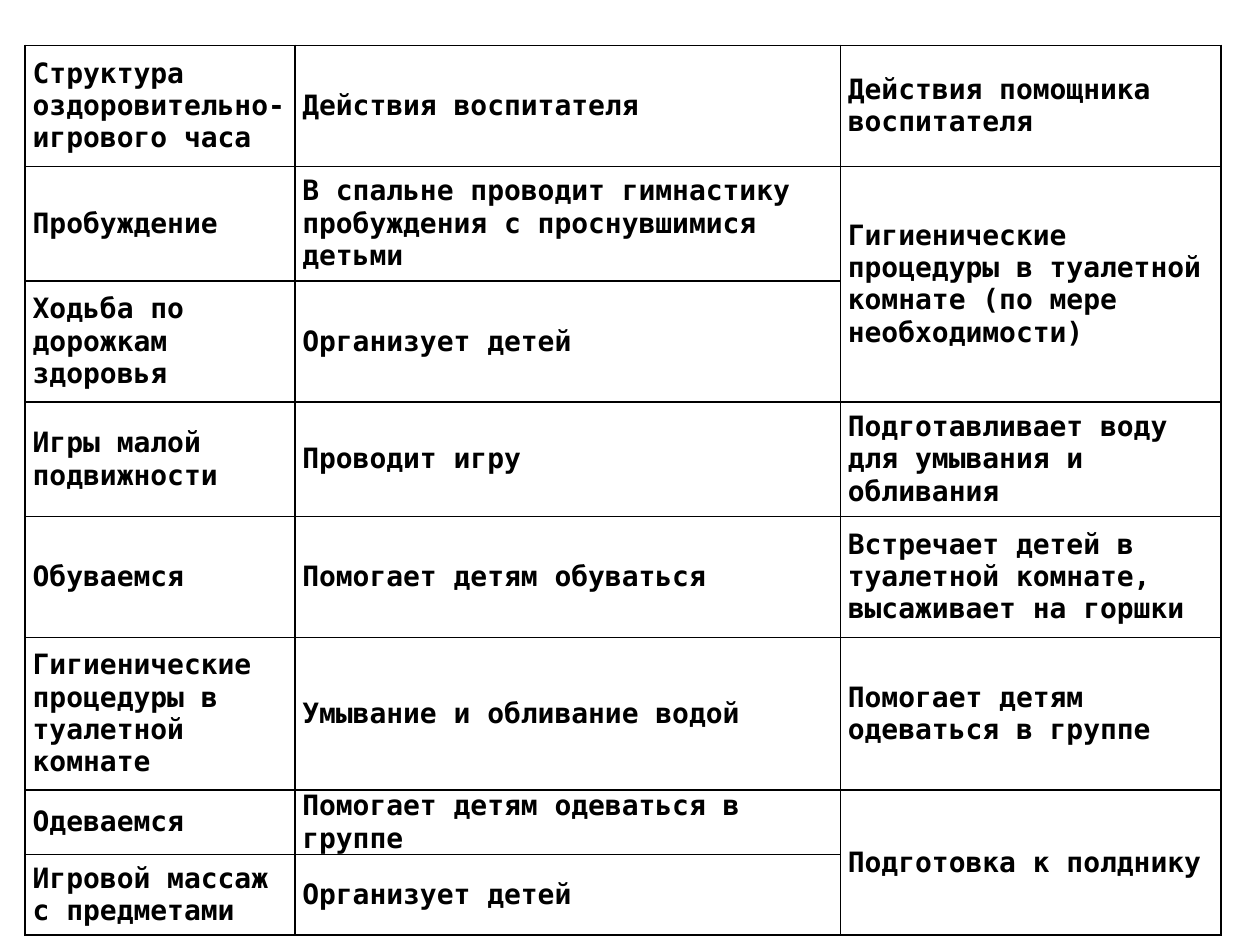
import pptx
import pptx.dml.color
import pptx.enum.text
import pptx.oxml
import pptx.oxml.ns
import pptx.util

THEME = {
    "font": "DejaVu Sans Mono",
    "size": 16,
    "ink": "000000",
    "paper": "FFFFFF",
    "border": 1,
}

presentation = pptx.Presentation()
presentation.slide_width = pptx.util.Inches(10)
presentation.slide_height = pptx.util.Inches(7.5)
slide = presentation.slides.add_slide(presentation.slide_layouts[6])

# The slide is a grid of 1000 by 750 square units.
UNIT = presentation.slide_width // 1000
LEFT, TOP = 20, 36
COLUMN_WIDTHS = [214, 433, 302]
ROW_HEIGHTS = [96, 91, 96, 91, 96, 121, 32, 64]
SIDE_MARGIN = 6

# None continues the cell above.
ROWS = [
    ("Структура оздоровительно-игрового часа", "Действия воспитателя",
     "Действия помощника воспитателя"),
    ("Пробуждение",
     "В спальне проводит гимнастику пробуждения с проснувшимися детьми",
     "Гигиенические процедуры в туалетной комнате (по мере необходимости)"),
    ("Ходьба по дорожкам здоровья", "Организует детей", None),
    ("Игры малой подвижности", "Проводит игру",
     "Подготавливает воду для умывания и обливания"),
    ("Обуваемся", "Помогает детям обуваться",
     "Встречает детей в туалетной комнате, высаживает на горшки"),
    ("Гигиенические процедуры в туалетной комнате",
     "Умывание и обливание водой", "Помогает детям одеваться в группе"),
    ("Одеваемся", "Помогает детям одеваться в группе",
     "Подготовка к полднику"),
    ("Игровой массаж с предметами", "Организует детей", None),
]


def write_text(cell, text, *, size=THEME["size"], color=THEME["ink"], bold=True):
    cell.text = text
    font = cell.text_frame.paragraphs[0].runs[0].font
    font.name = THEME["font"]
    font.size = pptx.util.Pt(size)
    font.bold = bold
    font.color.rgb = pptx.dml.color.RGBColor.from_string(color)


def draw_borders(cell):
    properties = cell._tc.get_or_add_tcPr()
    width = pptx.util.Pt(THEME["border"])
    for side in ("lnL", "lnR", "lnT", "lnB"):
        properties.append(pptx.oxml.parse_xml(
            f'<a:{side} {pptx.oxml.ns.nsdecls("a")} w="{width}"><a:solidFill>'
            f'<a:srgbClr val="{THEME["ink"]}"/></a:solidFill></a:{side}>'))


table = slide.shapes.add_table(
    len(ROWS), len(COLUMN_WIDTHS), LEFT * UNIT, TOP * UNIT,
    sum(COLUMN_WIDTHS) * UNIT, sum(ROW_HEIGHTS) * UNIT).table
table.first_row = False
table.horz_banding = False

for column, width in zip(table.columns, COLUMN_WIDTHS):
    column.width = width * UNIT
for row, height in zip(table.rows, ROW_HEIGHTS):
    row.height = height * UNIT

for row_index, texts in enumerate(ROWS):
    for column_index, text in enumerate(texts):
        cell = table.cell(row_index, column_index)
        cell.margin_left = cell.margin_right = SIDE_MARGIN * UNIT
        cell.margin_top = cell.margin_bottom = 0
        cell.vertical_anchor = pptx.enum.text.MSO_ANCHOR.MIDDLE
        draw_borders(cell)
        cell.fill.solid()
        cell.fill.fore_color.rgb = pptx.dml.color.RGBColor.from_string(THEME["paper"])
        if text is None:
            table.cell(row_index - 1, column_index).merge(cell)
        else:
            write_text(cell, text)

presentation.save("out.pptx")
